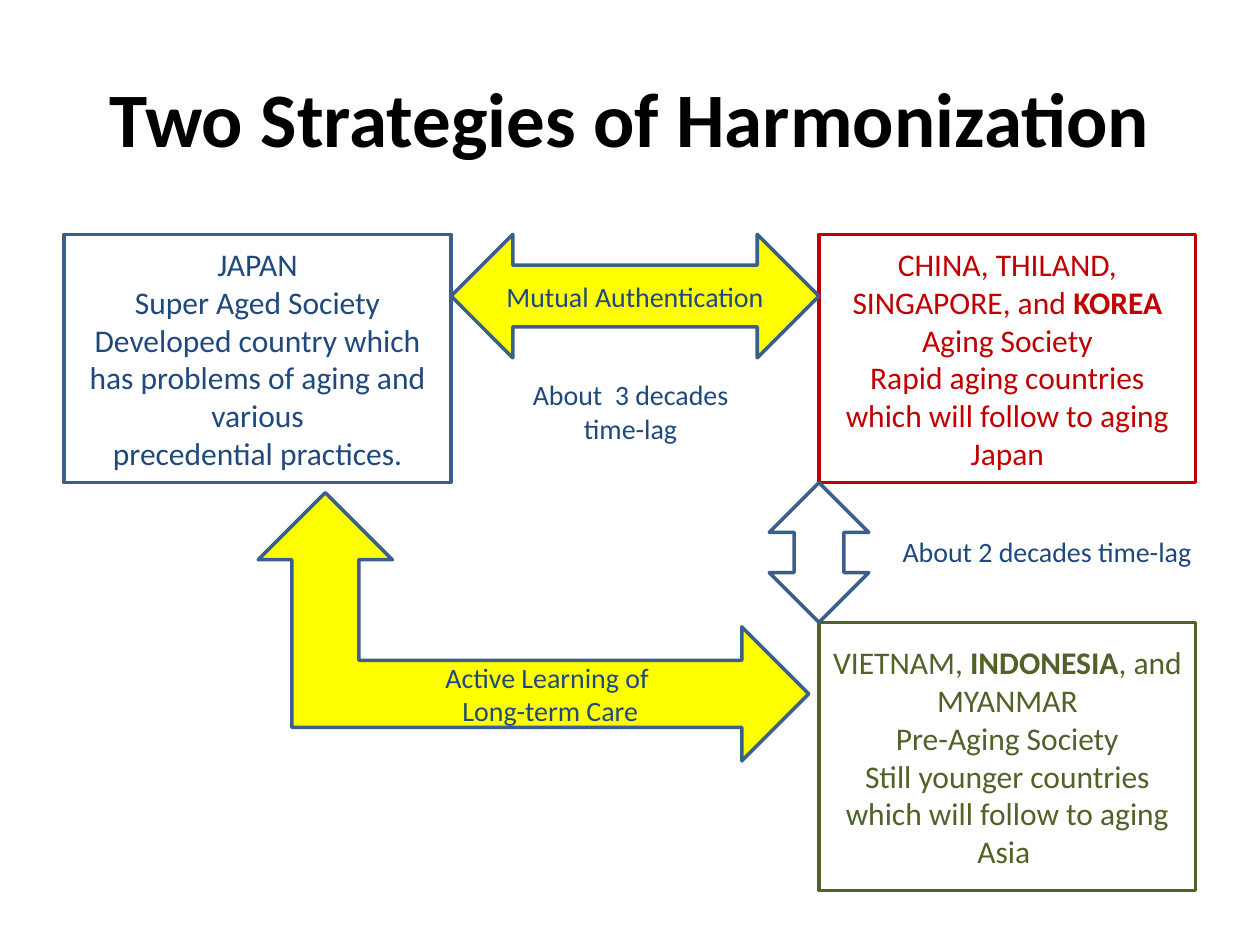
from pptx import Presentation
from pptx.dml.color import RGBColor
from pptx.enum.shapes import MSO_SHAPE as Shape
from pptx.enum.text import MSO_ANCHOR as Anchor, PP_ALIGN as Align
from pptx.oxml.ns import qn
from pptx.util import Inches, Pt

BLACK = RGBColor(0x00, 0x00, 0x00)
NAVY = RGBColor(0x1F, 0x49, 0x7D)
STEEL = RGBColor(0x3A, 0x5F, 0x8C)
RED = RGBColor(0xC0, 0x00, 0x00)
GREEN = RGBColor(0x4F, 0x62, 0x28)
YELLOW = RGBColor(0xFF, 0xFF, 0x00)
FONT = "Calibri"

# Content: paragraphs are lists of (text, bold) runs
TITLE = [[("Two Strategies of Harmonization", True)]]
JAPAN = [
    [("JAPAN", False)],
    [("Super Aged Society", False)],
    [("Developed country which has problems of aging and various", False)],
    [("precedential practices.", False)],
]
AGING = [
    [("CHINA, THILAND, SINGAPORE, and ", False), ("KOREA", True)],
    [("Aging Society", False)],
    [("Rapid aging countries which will follow to aging Japan", False)],
]
PRE_AGING = [
    [("VIETNAM, ", False), ("INDONESIA", True), (", and MYANMAR", False)],
    [("Pre-Aging Society", False)],
    [("Still younger countries which will follow to aging Asia ", False)],
]
MUTUAL = [[("Mutual Authentication", False)]]
LEARNING = [[("Active Learning of ", False)], [("Long-term Care", False)]]
LAG_THREE = [[("About  3 decades", False)], [("time-lag", False)]]
LAG_TWO = [[("About 2 decades time-lag", False)]]

# Grid: columns and rows shared by the boxes and the arrows between them
LEFT, LEFT_END, RIGHT, RIGHT_END = 0.51, 3.58, 6.5, 9.49
TOP, TOP_END, LOW, LOW_END = 1.86, 3.83, 4.94, 7.07
VERTICAL_WIDTH = 0.79

# (shape, left, top, right, bottom, line, fill, paragraphs, size, text colour)
BOXES = [
    (LEFT, TOP, LEFT_END, TOP_END, STEEL, JAPAN, NAVY),
    (RIGHT, TOP, RIGHT_END, TOP_END, RED, AGING, RED),
    (RIGHT, LOW, RIGHT_END, LOW_END, GREEN, PRE_AGING, GREEN),
]
ARROWS = [
    (Shape.LEFT_RIGHT_ARROW, LEFT_END, TOP, RIGHT, 2.84, YELLOW, MUTUAL),
    (Shape.UP_DOWN_ARROW, RIGHT - VERTICAL_WIDTH / 2, TOP_END,
     RIGHT + VERTICAL_WIDTH / 2, LOW, None, []),
    (Shape.LEFT_UP_ARROW, 2.05, 3.91, 6.42, 6.04, YELLOW, LEARNING),
]
LABELS = [
    (0.5, 0.3, 9.5, 1.55, TITLE, 44, BLACK),
    (6.97, 4.22, 9.65, 4.53, LAG_TWO, 16, NAVY),
    (4.02, 3.03, 5.99, 3.5, LAG_THREE, 16, NAVY),
]


def place(left, top, right, bottom):
    return [Inches(v) for v in (left, top, right - left, bottom - top)]


def write(shape, paragraphs, size, color):
    frame = shape.text_frame
    frame.word_wrap = True
    frame.vertical_anchor = Anchor.MIDDLE
    for index, runs in enumerate(paragraphs):
        para = frame.add_paragraph() if index else frame.paragraphs[0]
        para.alignment = Align.CENTER
        for text, bold in runs:
            span = para.add_run()
            span.text = text
            span.font.name = FONT
            span.font.size = Pt(size)
            span.font.bold = bold
            span.font.color.rgb = color


def add_outlined(page, kind, corners, line, fill=None):
    shape = page.shapes.add_shape(kind, *place(*corners))
    shape.shadow.inherit = False
    shape.line.color.rgb = line
    shape.line.width = Pt(2)
    if fill is None:
        shape.fill.background()
    else:
        shape.fill.solid()
        shape.fill.fore_color.rgb = fill
    return shape


def main():
    deck = Presentation()
    deck.slide_width, deck.slide_height = Inches(10), Inches(7.5)
    page = deck.slides.add_slide(deck.slide_layouts[6])

    # Country groups
    for *corners, line, paragraphs, color in BOXES:
        box = add_outlined(page, Shape.RECTANGLE, corners, line)
        write(box, paragraphs, 18, color)

    # Strategies and time-lag arrows
    for kind, *corners, fill, paragraphs in ARROWS:
        arrow = add_outlined(page, kind, corners, STEEL, fill)
        write(arrow, paragraphs, 16, NAVY)
        if kind == Shape.UP_DOWN_ARROW:
            arrow.adjustments[0] = 0.51
            arrow.adjustments[1] = 0.5
        elif kind == Shape.LEFT_UP_ARROW:
            # Mirrored so that it points up and right
            arrow._element.spPr.find(qn("a:xfrm")).set("flipH", "1")

    # Title and time-lag labels
    for *corners, paragraphs, size, color in LABELS:
        label = page.shapes.add_textbox(*place(*corners))
        write(label, paragraphs, size, color)

    deck.save("out.pptx")


if __name__ == "__main__":
    main()
